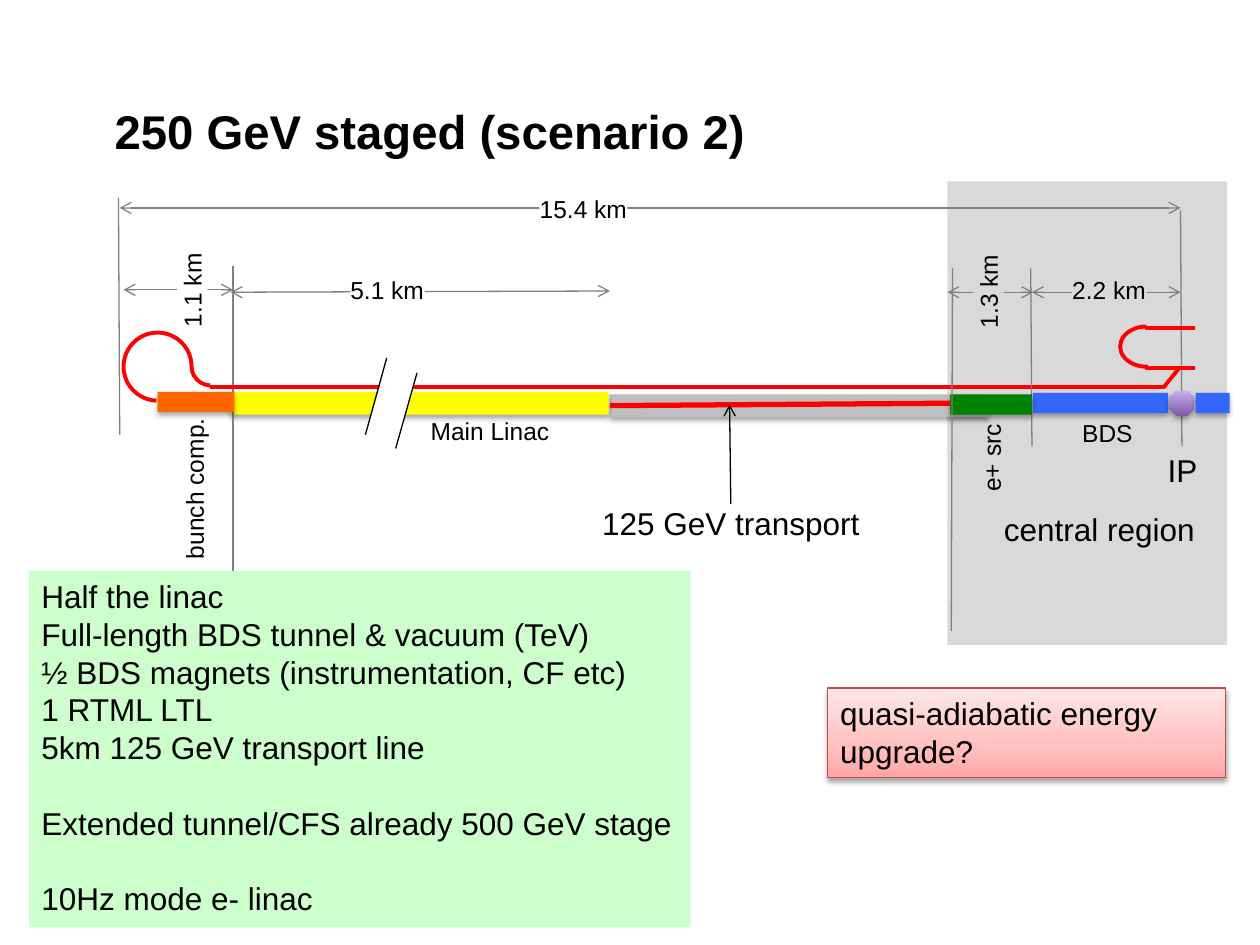
from copy import deepcopy

from lxml.etree import SubElement
from pptx import Presentation
from pptx.dml.color import RGBColor
from pptx.enum.shapes import MSO_CONNECTOR, MSO_SHAPE
from pptx.enum.text import MSO_ANCHOR, MSO_AUTO_SIZE, PP_ALIGN
from pptx.oxml.ns import qn
from pptx.util import Pt

COLORS = {
    "black": "000000", "white": "FFFFFF", "region": "D9D9D9", "tunnel": "BFBFBF",
    "guide": "808080", "dimension": "7F7F7F", "beam": "FF0000", "linac": "FFFF00",
    "compressor": "FF6600", "delivery": "3366FF", "positron": "008000",
    "notes": "CCFFCC", "question": "BF4C48",
}
IP_GRADIENT = [(0, "7F5BAB"), (1, "C8B0ED")]
QUESTION_GRADIENT = [(0, "FFA6A5"), (0.35, "FFC0BF"), (1, "FFE7E7")]
NOTES = [
    ("Half the linac", 0),
    ("Full-length BDS tunnel & vacuum (TeV)", 0),
    ("½ BDS magnets (instrumentation, CF etc)", 0),
    ("1 RTML LTL", 0),
    ("5km 125 GeV transport line", 0),
    ("Extended tunnel/CFS already 500 GeV stage", 21.6),
    ("10Hz mode e- linac", 21.6),
]


class SlideBuilder:
    """Draws styled elements on one slide, with all lengths in points."""

    font = "Arial"
    padding = (7.2, 3.6)

    def __init__(self, slide):
        self.slide = slide

    def color(self, name):
        return RGBColor.from_string(COLORS[name])

    def add_run(self, paragraph, text, size, bold=False):
        run = paragraph.add_run()
        run.text = text
        run.font.name = self.font
        run.font.size = Pt(size)
        run.font.bold = bold
        run.font.color.rgb = self.color("black")

    def set_margins(self, frame, horizontal, vertical):
        frame.margin_left = frame.margin_right = Pt(horizontal)
        frame.margin_top = frame.margin_bottom = Pt(vertical)

    def title(self, text, box, size=27):
        shape = self.slide.shapes.title
        shape.left, shape.top, shape.width, shape.height = map(Pt, box)
        frame = shape.text_frame
        self.set_margins(frame, 0, 0)
        frame.vertical_anchor = MSO_ANCHOR.MIDDLE
        paragraph = frame.paragraphs[0]
        paragraph.alignment = PP_ALIGN.LEFT
        self.add_run(paragraph, text, size, bold=True)

    def shape(self, box, fill=None, line=None, width=0.75, kind=MSO_SHAPE.RECTANGLE,
              rotation=0, shadow=False, angles=()):
        shape = self.slide.shapes.add_shape(kind, *map(Pt, box))
        shape.rotation = rotation
        for index, angle in enumerate(angles):
            shape.adjustments[index] = angle * 0.6
        if isinstance(fill, list):
            self.gradient(shape, fill)
        elif fill:
            shape.fill.solid()
            shape.fill.fore_color.rgb = self.color(fill)
        else:
            shape.fill.background()
        if line:
            shape.line.color.rgb = self.color(line)
            shape.line.width = Pt(width)
        else:
            shape.line.fill.background()
        shape.shadow.inherit = False
        if shadow:
            self.drop_shadow(shape)
        return shape

    def gradient(self, shape, stops):
        shape.fill.gradient()
        shape.fill.gradient_angle = 90
        stop_list = next(shape._element.spPr.iter(qn("a:gsLst")))
        while len(stop_list) < len(stops):
            stop_list.append(deepcopy(stop_list[-1]))
        for stop, (position, value) in zip(shape.fill.gradient_stops, stops):
            stop.position = position
            stop.color.rgb = RGBColor.from_string(value)

    def drop_shadow(self, shape):
        effects = shape._element.spPr.find(qn("a:effectLst"))
        outer = SubElement(effects, qn("a:outerShdw"), blurRad=str(Pt(3.1)),
                           dist=str(Pt(1.8)), dir="5400000", rotWithShape="0")
        color = SubElement(outer, qn("a:srgbClr"), val=COLORS["black"])
        SubElement(color, qn("a:alpha"), val="35000")

    def line(self, start, end, color="guide", width=0.75, head=False, tail=False):
        connector = self.slide.shapes.add_connector(
            MSO_CONNECTOR.STRAIGHT, *map(Pt, (*start, *end)))
        connector.line.color.rgb = self.color(color)
        connector.line.width = Pt(width)
        properties = connector._element.spPr
        outline = properties.find(qn("a:ln"))
        for tag, present in (("a:headEnd", head), ("a:tailEnd", tail)):
            if present:
                SubElement(outline, qn(tag), type="arrow")
        SubElement(properties, qn("a:effectLst"))

    def dimension(self, start, end):
        self.line(start, end, "dimension", head=True, tail=True)

    def add_text(self, shape, paragraphs, size, margins=padding, wrap=False,
                 alignment=PP_ALIGN.LEFT):
        frame = shape.text_frame
        frame.word_wrap = wrap
        frame.auto_size = MSO_AUTO_SIZE.SHAPE_TO_FIT_TEXT
        frame.vertical_anchor = MSO_ANCHOR.TOP
        self.set_margins(frame, *margins)
        for index, (text, space) in enumerate(paragraphs):
            paragraph = frame.add_paragraph() if index else frame.paragraphs[0]
            paragraph.alignment = alignment
            if space:
                paragraph.space_before = Pt(space)
            self.add_run(paragraph, text, size)

    def distance(self, text, left, top, fill, rotation=0, width=42.5,
                 alignment=PP_ALIGN.LEFT):
        shape = self.shape((left, top, width, 17.3), fill, rotation=rotation)
        self.add_text(shape, [(text, 0)], 14, margins=(0, 0), alignment=alignment)

    def label(self, text, box, size=14, rotation=0):
        shape = self.slide.shapes.add_textbox(*map(Pt, box))
        shape.rotation = rotation
        self.add_text(shape, [(text, 0)], size)

    def arc(self, box, angles, rotation=0):
        self.shape(box, line="beam", width=2.25, kind=MSO_SHAPE.ARC,
                   rotation=rotation, angles=angles)

    def beam(self, start, end, width=2.25):
        self.line(start, end, "beam", width)


def draw_linac(builder):
    builder.shape((131.8, 223.9, 216, 13), "linac", shadow=True)
    builder.line((133.2, 151.9), (133.2, 359.3))
    builder.shape((90, 223.9, 43.9, 11.5), "compressor", shadow=True)
    builder.line((67.7, 113), (68.4, 248.4))
    builder.dimension((131.8, 167), (348.5, 166.3))
    builder.dimension((70.6, 165.6), (133.2, 165.6))
    builder.distance("5.1 km", 200.2, 157, "white")
    builder.distance("1.1 km", 88.6, 157, "white", rotation=270)
    builder.label("Main Linac", (239, 234, 82.8, 24.5))
    builder.label("bunch comp.", (63.4, 266.4, 95.8, 24.5), rotation=270)
    builder.arc((70.6, 190.1, 38.9, 38.9), (91.91, 0))
    builder.arc((109.4, 198, 22.3, 22.3), (91.91, 180))
    builder.beam((120.2, 221), (664.6, 221))
    builder.shape((215.3, 206.6, 18, 45.4), "white", "white", rotation=15.9)
    builder.line((221, 204.5), (208.8, 248.4), "black")
    builder.line((238.3, 213.1), (226.1, 256.3), "black")


def draw_central_region(builder):
    builder.shape((590.4, 224.6, 77, 11.5), "delivery", shadow=True)
    builder.line((674.6, 120.2), (675.4, 254.9))
    builder.line((589, 153.4), (589.7, 254.9))
    builder.shape((542.9, 225.4, 46.8, 11.5), "positron", shadow=True)
    builder.line((544.3, 153.4), (543.6, 360.7))
    builder.dimension((589.7, 167), (674.6, 167))
    builder.dimension((541.4, 167), (590.4, 167))
    builder.distance("2.2 km", 612.7, 157, "region")
    builder.distance("1.3 km", 543.6, 157.7, "region", rotation=270)
    builder.label("BDS", (611.3, 235.4, 43.9, 24.5))
    builder.label("e+ src", (540, 249.1, 53.3, 24.5), rotation=270)
    builder.shape((668.2, 223.2, 14.4, 14.4), IP_GRADIENT,
                  kind=MSO_SHAPE.OCTAGON, shadow=True)
    builder.label("IP", (660.2, 254.2, 31.7, 28.8), 18)
    builder.arc((643.7, 182.9, 23, 30.2), (175.91, 0), rotation=270)
    for y in (187.2, 210.2):
        builder.beam((654.5, y), (682.6, y))
    builder.beam((664.6, 221.8), (673.9, 210.2))
    builder.label("central region", (566.6, 288, 124.6, 28.8), 18)
    builder.shape((683.3, 224.6, 19.4, 11.5), "delivery", shadow=True)


def main():
    presentation = Presentation()
    presentation.slide_width, presentation.slide_height = Pt(720), Pt(540)
    builder = SlideBuilder(presentation.slides.add_slide(presentation.slide_layouts[5]))
    builder.title("250 GeV staged (scenario 2)", (65.5, 54.7, 589, 39.6))
    builder.shape((541.4, 103.7, 159.8, 265), "region")
    builder.shape((348.5, 225.4, 216, 13), "tunnel", shadow=True)
    draw_linac(builder)
    draw_central_region(builder)
    builder.dimension((68.4, 118.8), (674.6, 118.8))
    builder.distance("15.4 km", 308.2, 110.9, "white", width=50.4,
                     alignment=PP_ALIGN.CENTER)
    builder.beam((348.5, 231.8), (542.9, 230.4), 3)
    builder.line((417.6, 288), (416.9, 231.1), "black", tail=True)
    builder.label("125 GeV transport", (337, 284.4, 162.7, 28.8), 18)
    notes = builder.shape((16.6, 326.2, 378, 203.8), "notes")
    builder.add_text(notes, NOTES, 18)
    question = builder.shape((473, 393.1, 227.5, 51.1), QUESTION_GRADIENT,
                             "question", shadow=True)
    builder.add_text(question, [("quasi-adiabatic energy upgrade?", 0)], 18, wrap=True)
    presentation.save("out.pptx")


if __name__ == "__main__":
    main()
